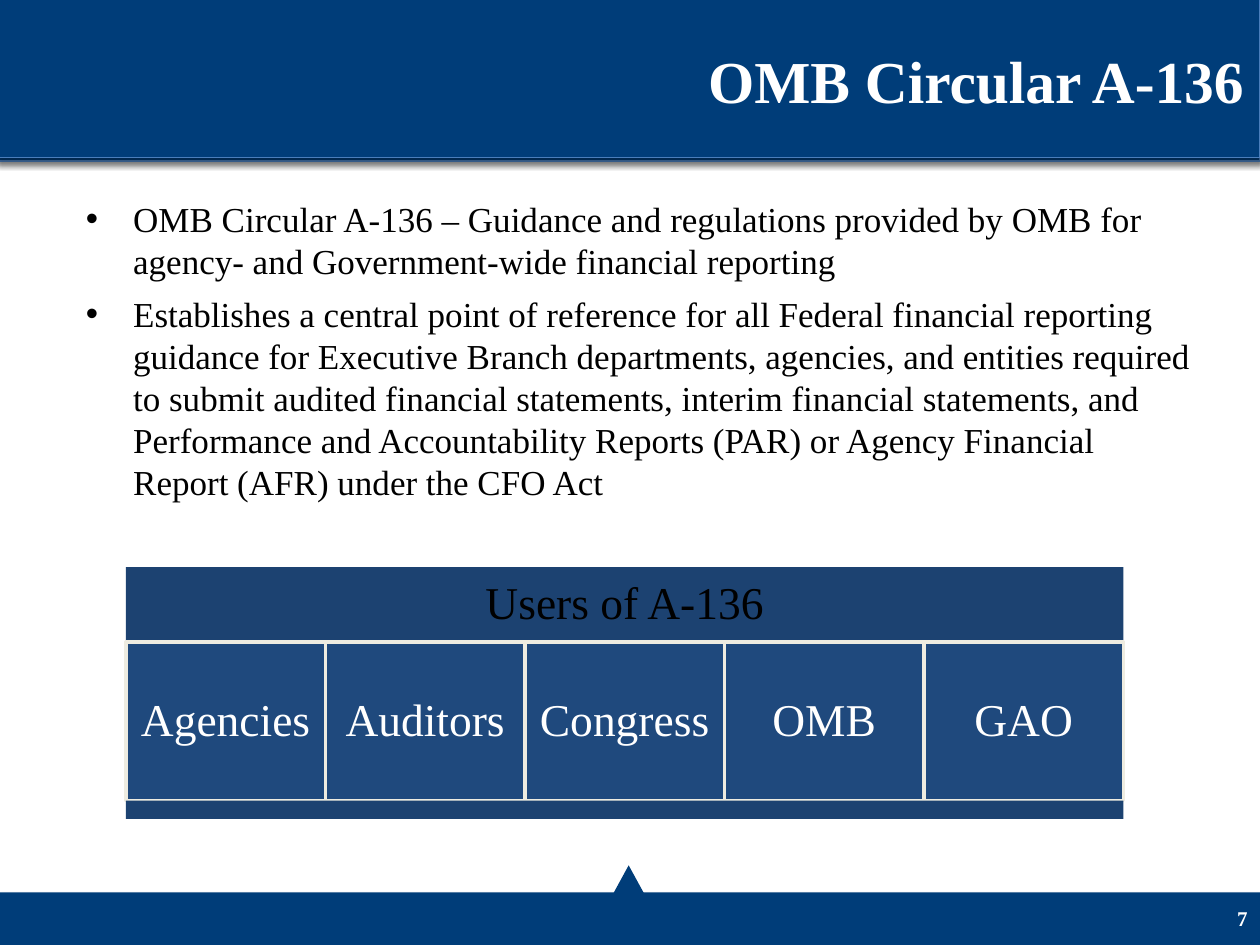
import pptx
import pptx.dml.color
import pptx.enum.shapes
import pptx.enum.text
import pptx.oxml.ns
import pptx.util
from lxml import etree

Pt = pptx.util.Pt
SHAPE = pptx.enum.shapes.MSO_SHAPE
ALIGN = pptx.enum.text.PP_ALIGN
ANCHOR = pptx.enum.text.MSO_ANCHOR
qn = pptx.oxml.ns.qn

FONT = "Times New Roman"
NAVY = "003D79"
BAND = "1C4271"
CELL = "1F497D"
WHITE = "FFFFFF"


def rgb(value):
    return pptx.dml.color.RGBColor.from_string(value)


def add_shadow(sp):
    effects = sp._element.spPr.find(qn("a:effectLst"))
    shadow = etree.SubElement(
        effects, qn("a:outerShdw"), blurRad=str(Pt(3.1)), dist=str(Pt(1.8)),
        dir="5400000", rotWithShape="0")
    color = etree.SubElement(shadow, qn("a:srgbClr"), val="000000")
    etree.SubElement(color, qn("a:alpha"), val="35000")


def add_block(slide, box, fill, line=None, width=0.75, shadow=False, kind=SHAPE.RECTANGLE):
    sp = slide.shapes.add_shape(kind, *map(Pt, box))
    sp.shadow.inherit = False
    sp.fill.solid()
    sp.fill.fore_color.rgb = rgb(fill)
    if line:
        sp.line.color.rgb = rgb(line)
        sp.line.width = Pt(width)
    else:
        sp.line.fill.background()
    if shadow:
        add_shadow(sp)
    return sp


def add_bullet(p, indent):
    pPr = p._p.get_or_add_pPr()
    pPr.set("marL", str(Pt(indent)))
    pPr.set("indent", str(-Pt(indent)))
    etree.SubElement(pPr, qn("a:buFont"), typeface="Arial")
    etree.SubElement(pPr, qn("a:buChar"), char="•")


def write(sp, text, size=26, color=WHITE, bold=False, align=ALIGN.CENTER,
          anchor=ANCHOR.MIDDLE, spacing=None, before=0, indent=None, inset=None):
    tf = sp.text_frame
    tf.word_wrap = True
    tf.vertical_anchor = anchor
    if inset is not None:
        tf.margin_left = tf.margin_right = tf.margin_top = tf.margin_bottom = Pt(inset)
    for i, line in enumerate(text.split("\n")):
        p = tf.add_paragraph() if i else tf.paragraphs[0]
        p.alignment = align
        if spacing:
            p.line_spacing = spacing
        p.space_before = Pt(before if i else 0)
        if indent:
            add_bullet(p, indent)
        r = p.add_run()
        r.text = line
        r.font.name = FONT
        r.font.size = Pt(size)
        r.font.bold = bold
        r.font.color.rgb = rgb(color)


def add_text(slide, box, text, **style):
    write(slide.shapes.add_textbox(*map(Pt, box)), text, **style)


def add_frame(slide):
    add_block(slide, (0, 510, 720, 30), NAVY, shadow=True)
    add_block(slide, (347.5, 494.5, 23.5, 21.5), NAVY, kind=SHAPE.ISOSCELES_TRIANGLE)
    for top in (0.5, -1.5):
        add_block(slide, (-1.5, top, 721.5, 91.5), NAVY, line="4A7EBB", shadow=True)


def add_users(slide, title, users):
    left, top, width = 72, 324, 570
    head, body, foot = 43, 90.5, 10.5
    style = dict(spacing=0.9, inset=8)
    sp = add_block(slide, (left, top, width, head), BAND)
    write(sp, title, color="000000", **style)
    step = width / len(users)
    for i, user in enumerate(users):
        box = (left + i * step, top + head, step, body)
        write(add_block(slide, box, CELL, line="EEECE1", width=2), user, **style)
    add_block(slide, (left, top + head + body, width, foot), BAND)


def main():
    prs = pptx.Presentation()
    prs.slide_width, prs.slide_height = Pt(720), Pt(540)
    slide = prs.slides.add_slide(prs.slide_layouts[6])
    add_frame(slide)
    add_text(slide, (552, 510, 168, 29), "7", size=12, bold=True, align=ALIGN.RIGHT)
    add_text(slide, (186, 0.5, 532, 90), "OMB Circular A-136", size=34, bold=True,
             align=ALIGN.RIGHT)
    add_text(
        slide, (42, 109.5, 648, 380),
        "OMB Circular A-136 – Guidance and regulations provided by OMB for "
        "agency- and Government-wide financial reporting\n"
        "Establishes a central point of reference for all Federal financial reporting "
        "guidance for Executive Branch departments, agencies, and entities required "
        "to submit audited financial statements, interim financial statements, and "
        "Performance and Accountability Reports (PAR) or Agency Financial "
        "Report (AFR) under the CFO Act",
        size=20, color="000000", align=ALIGN.LEFT, anchor=ANCHOR.TOP,
        spacing=Pt(24), before=6, indent=27)
    add_users(slide, "Users of A-136", ["Agencies", "Auditors", "Congress", "OMB", "GAO"])
    prs.save("out.pptx")


if __name__ == "__main__":
    main()
